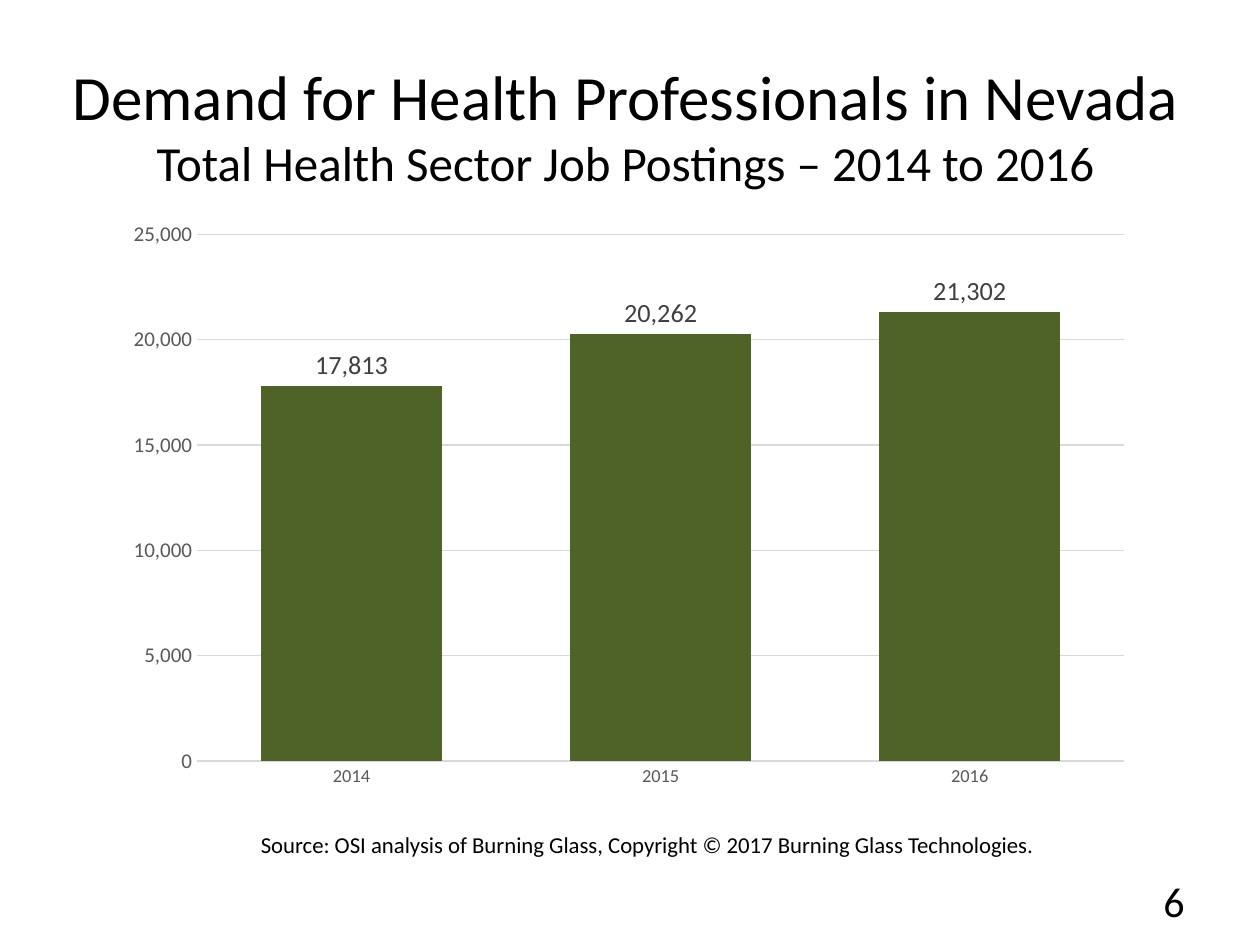
"""Build a slide charting health sector job postings in Nevada."""
from pptx import Presentation
from pptx.chart.data import CategoryChartData
from pptx.dml.color import RGBColor
from pptx.enum.chart import XL_CHART_TYPE, XL_LABEL_POSITION, XL_TICK_MARK
from pptx.enum.text import MSO_ANCHOR, PP_ALIGN
from pptx.util import Emu, Pt

SCALE = 914400 / 126
FONT = "Calibri"
POSTINGS = {"2014": 17813, "2015": 20262, "2016": 21302}


def px(n):
    return Emu(round(n * SCALE))


def rgb(value):
    return RGBColor.from_string(value)


def set_font(font, size, color="000000"):
    font.name = FONT
    font.size = Pt(size)
    font.color.rgb = rgb(color)


def set_line(line, color="D9D9D9"):
    line.color.rgb = rgb(color)
    line.width = Pt(0.75)


def add_text(s, box, lines, align, anchor=MSO_ANCHOR.MIDDLE, wrap=True):
    tf = s.shapes.add_textbox(*map(px, box)).text_frame
    tf.word_wrap = wrap
    tf.vertical_anchor = anchor
    p = tf.paragraphs[0]
    p.alignment = align
    for i, (text, size) in enumerate(lines):
        if i:
            p.add_line_break()
        r = p.add_run()
        r.text = text
        set_font(r.font, size)


def style_axis(axis, size):
    axis.major_tick_mark = axis.minor_tick_mark = XL_TICK_MARK.NONE
    set_font(axis.tick_labels.font, size, "595959")


def add_postings_chart(s, box):
    data = CategoryChartData(number_format="#,##0")
    data.categories = POSTINGS.keys()
    data.add_series("Series 1", POSTINGS.values())
    chart = s.shapes.add_chart(XL_CHART_TYPE.COLUMN_CLUSTERED, *map(px, box), data).chart
    chart.has_legend = chart.has_title = False
    set_font(chart.font, 10)

    years, counts = chart.category_axis, chart.value_axis
    style_axis(years, 10.5)
    set_line(years.format.line)
    style_axis(counts, 12)
    counts.format.line.fill.background()
    counts.minimum_scale, counts.maximum_scale, counts.major_unit = 0, 25000, 5000
    counts.tick_labels.number_format = "#,##0"
    counts.tick_labels.number_format_is_linked = False
    set_line(counts.major_gridlines.format.line)

    plot = chart.plots[0]
    plot.vary_by_categories = False
    plot.gap_width, plot.overlap = 71, -27
    fill = plot.series[0].format.fill
    fill.solid()
    fill.fore_color.rgb = rgb("4F6228")
    plot.has_data_labels = True
    labels = plot.data_labels
    labels.show_value = True
    labels.position = XL_LABEL_POSITION.OUTSIDE_END
    set_font(labels.font, 15, "404040")


def main():
    prs = Presentation()
    prs.slide_width, prs.slide_height = px(1260), px(945)
    s = prs.slides.add_slide(prs.slide_layouts[6])
    add_text(s, (32, 38, 1187, 173), [
        ("Demand for Health Professionals in Nevada", 36),
        ("Total Health Sector Job Postings – 2014 to 2016", 28),
    ], PP_ALIGN.CENTER)
    add_text(s, (241, 825, 811, 40), [
        ("Source: OSI analysis of Burning Glass, Copyright © 2017 Burning Glass Technologies.", 13),
    ], PP_ALIGN.CENTER, MSO_ANCHOR.TOP, wrap=False)
    add_postings_chart(s, (113, 210, 1032, 590))
    add_text(s, (903, 876, 294, 50), [("6", 24)], PP_ALIGN.RIGHT)
    prs.save("out.pptx")


if __name__ == "__main__":
    main()
